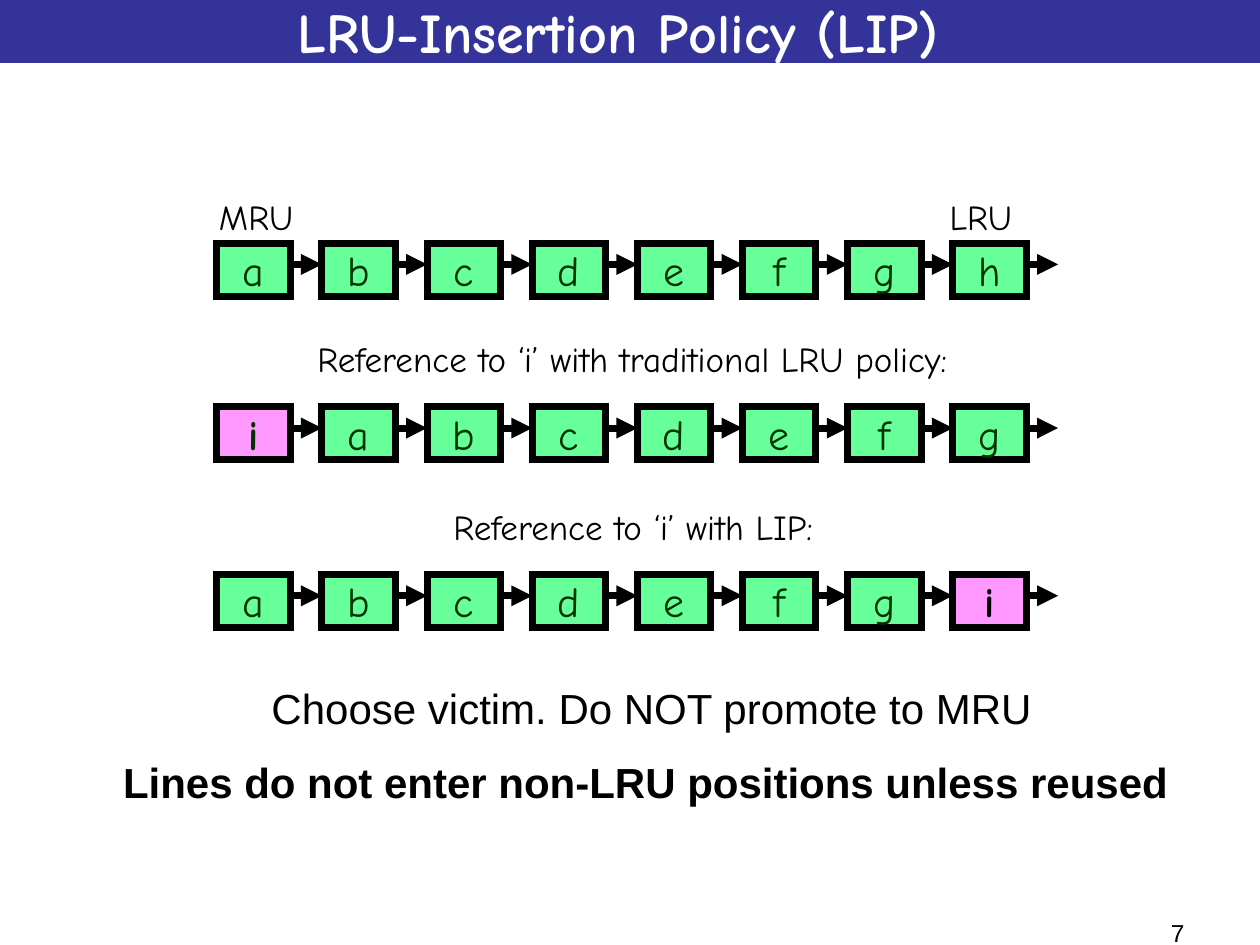
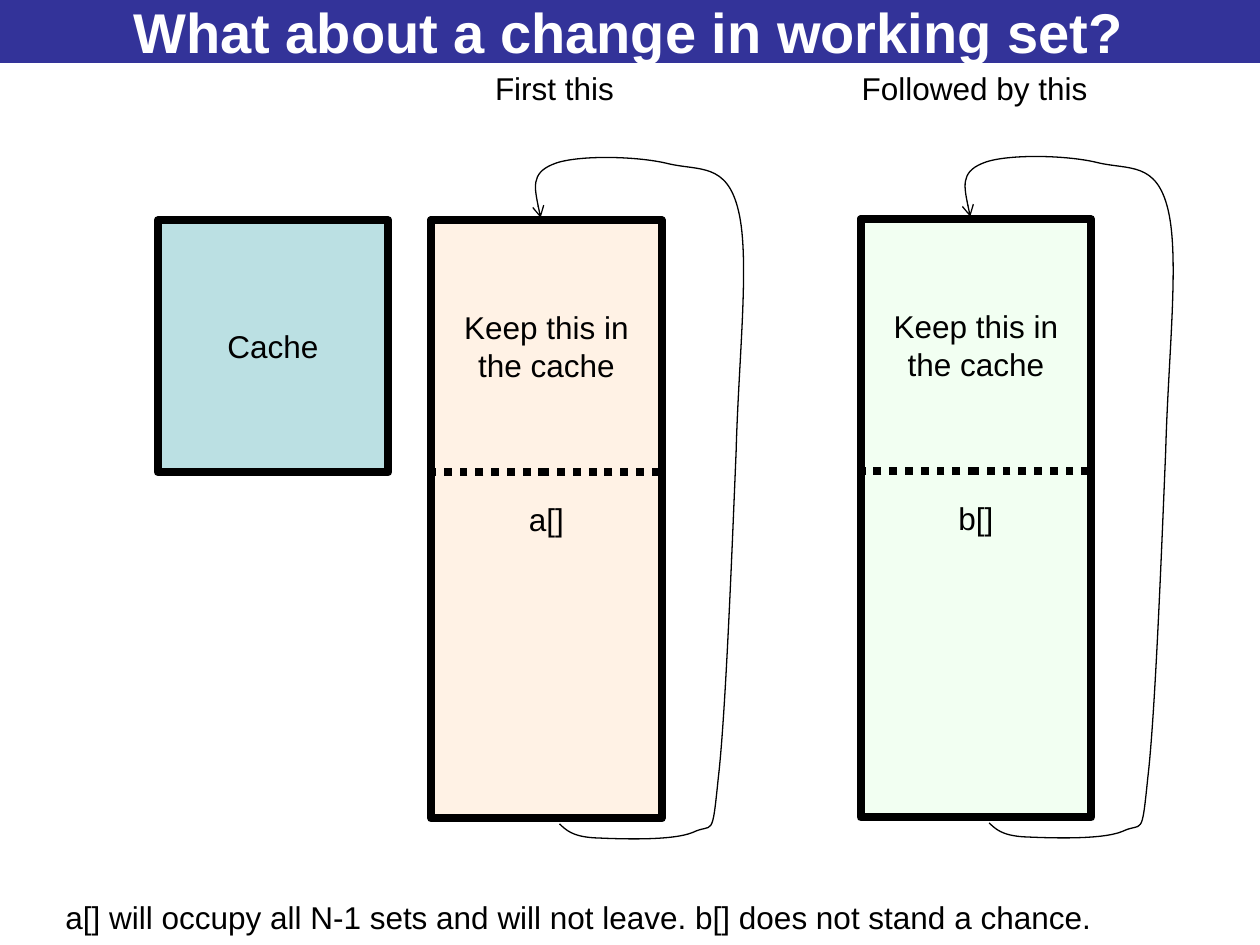
from lxml import etree
from pptx import Presentation
from pptx import util as u
from pptx.dml.color import RGBColor
from pptx.enum import dml, shapes, text
from pptx.oxml.ns import qn

COLORS = {
    "band": "333399", "white": "FFFFFF", "black": "000000",
    "cell": "66FF99", "new_cell": "FF99FF", "cell_ink": "003300",
    "cache": "BBE0E3", "array_a": "FFCC99", "array_b": "CCFFCC",
}
SANS, COMIC = "Arial", "Comic Neue"
LEFT, CENTER, RIGHT = text.PP_ALIGN.LEFT, text.PP_ALIGN.CENTER, text.PP_ALIGN.RIGHT

# Cache line chains, in cm
CELL_WIDTH, CELL_HEIGHT, CELL_PITCH = 1.48, 1.07, 2.12
CHAIN_LEFT, ARROW_DROP = 4.37, 0.43

# Working set blocks, in cm
BLOCK_WIDTH, BLOCK_HEIGHT, CACHE_HEIGHT = 4.65, 12.06, 5.08
# Start point, then three Bezier points per curve, from the block's top left
LOOP_POINTS = [
    (2.59, 12.17),
    (2.72, 12.29), (2.84, 12.42), (3.28, 12.45),
    (3.73, 12.47), (4.85, 12.52), (5.28, 12.34),
    (5.69, 12.14), (5.66, 12.52), (5.79, 11.25),
    (5.94, 9.98), (6.07, 6.58), (6.15, 4.67),
    (6.2, 2.77), (6.43, 0.79), (6.2, -0.18),
    (5.97, -1.17), (5.41, -0.99), (4.78, -1.14),
    (4.14, -1.3), (2.87, -1.32), (2.44, -1.12),
    (2.01, -0.94), (2.11, -0.51), (2.21, -0.05),
]


def rgb(name):
    return RGBColor.from_string(COLORS[name])


def cm(*lengths):
    return [u.Cm(length) for length in lengths]


def add_para(frame, para, words, size, font=SANS, color="black", bold=False,
             align=CENTER):
    para.alignment = align
    span = para.add_run()
    span.text = words
    span.font.size = u.Pt(size)
    span.font.name = font
    span.font.bold = bold
    span.font.color.rgb = rgb(color)


def add_label(parent, place, words, size, wrap=False, **style):
    box = parent.shapes.add_textbox(*cm(*place))
    frame = box.text_frame
    frame.word_wrap = wrap
    frame.auto_size = text.MSO_AUTO_SIZE.SHAPE_TO_FIT_TEXT
    add_para(frame, frame.paragraphs[0], words, size, **style)
    return frame


def add_rect(parent, place, words, size, fill=None, line_width=None, wrap=True,
             **style):
    rect = parent.shapes.add_shape(shapes.MSO_SHAPE.RECTANGLE, *cm(*place))
    rect.shadow.inherit = False
    if fill:
        rect.fill.solid()
        rect.fill.fore_color.rgb = rgb(fill)
    else:
        rect.fill.background()
    if line_width:
        rect.line.color.rgb = rgb("black")
        rect.line.width = u.Pt(line_width)
    else:
        rect.line.fill.background()
    frame = rect.text_frame
    frame.word_wrap = wrap
    frame.vertical_anchor = text.MSO_ANCHOR.MIDDLE
    add_para(frame, frame.paragraphs[0], words, size, **style)
    return rect


def add_line_part(shape, tag, **values):
    etree.SubElement(shape.line._get_or_add_ln(), qn(tag), **values)


def add_arrow(parent, x1, x2, y):
    arrow = parent.shapes.add_connector(
        shapes.MSO_CONNECTOR.STRAIGHT, *cm(x1, y, x2, y))
    arrow.line.color.rgb = rgb("black")
    arrow.line.width = u.Pt(4)
    add_line_part(arrow, "a:tailEnd", type="triangle")
    etree.SubElement(arrow._element.spPr, qn("a:effectLst"))


def add_page(deck, title, font):
    page = deck.slides.add_slide(deck.slide_layouts[6])
    add_rect(page, (-0.05, 0, 25.45, 1.27), title, 32, fill="band",
             font=font, color="white", bold=True)
    return page


def add_chain(page, top, names, new_ink="cell_ink"):
    """Row of cache lines in recency order; line i is the new one."""
    chain = page.shapes.add_group_shape()
    lefts = [CHAIN_LEFT + i * CELL_PITCH for i in range(len(names))]
    for left, name in zip(lefts, names):
        is_new = name == "i"
        cell = add_rect(chain, (left, top, CELL_WIDTH, CELL_HEIGHT), name, 24,
                        fill="new_cell" if is_new else "cell", line_width=4,
                        wrap=False, font=COMIC, bold=is_new,
                        color=new_ink if is_new else "cell_ink")
        add_line_part(cell, "a:miter", lim="800000")
    for left in lefts:
        add_arrow(chain, left + CELL_WIDTH, left + CELL_PITCH, top + ARROW_DROP)
    return chain


def add_loop(page, left, top):
    points = [tuple(cm(left + x, top + y)) for x, y in LOOP_POINTS]
    builder = page.shapes.build_freeform(*points[0])
    builder.add_line_segments(points[1:], close=False)
    loop = builder.convert_to_shape()
    loop.shadow.inherit = False
    loop.fill.background()
    loop.line.color.rgb = rgb("black")
    loop.line.width = u.Pt(0.75)
    add_line_part(loop, "a:tailEnd", type="arrow")
    # Turn each three straight segments into one curve
    segments = list(loop._element.iter(qn("a:lnTo")))
    for i in range(0, len(segments), 3):
        curve = etree.Element(qn("a:cubicBezTo"))
        segments[i].addprevious(curve)
        for segment in segments[i:i + 3]:
            curve.append(segment[0])
            segment.getparent().remove(segment)


def add_working_set(page, left, top, name, fill):
    block = add_rect(page, (left, top, BLOCK_WIDTH, BLOCK_HEIGHT), name, 18,
                     fill=fill, line_width=4.5)
    tint = next(block._element.spPr.iter(qn("a:srgbClr")))
    etree.SubElement(tint, qn("a:alpha"), val="25000")
    kept = add_rect(page, (left, top, BLOCK_WIDTH, CACHE_HEIGHT),
                    "Keep this in the cache", 18, line_width=4.5)
    kept.line.dash_style = dml.MSO_LINE.ROUND_DOT
    add_loop(page, left, top)


def build_lip_page(deck):
    page = add_page(deck, "LRU-Insertion Policy (LIP) ", COMIC)
    add_label(page, (18.21, 18.39, 5.92, 0.66), "7", 14, wrap=True, align=RIGHT)

    # Three chains with their captions
    chains = [
        (4.9, "abcdefgh", "cell_ink",
         [((4.11, 3.81, 2.11, 1.09), "MRU"), ((18.85, 3.81, 1.85, 1.09), "LRU")]),
        (8.2, "iabcdefg", "cell_ink",
         [((5.41, 6.68, 14.68, 1.09),
           "Reference to ‘i’ with traditional LRU policy:")]),
        (11.58, "abcdefgi", "black",
         [((8.41, 10.06, 8.71, 1.09), "Reference to ‘i’ with LIP:")]),
    ]
    for top, names, new_ink, captions in chains:
        chain = add_chain(page, top, names, new_ink)
        for place, words in captions:
            add_label(chain, place, words, 20, font=COMIC)

    # Conclusion
    frame = add_label(page, (1.83, 13.64, 22.61, 2.82),
                      "Choose victim. Do NOT promote to MRU", 24, wrap=True)
    para = frame.add_paragraph()
    para.space_before = u.Pt(13.4)
    add_para(frame, para, "Lines do not enter non-LRU positions unless reused ",
             24, bold=True)


def build_working_set_page(deck):
    page = add_page(deck, "What about a change in working set?", SANS)
    add_rect(page, (3.18, 4.44, BLOCK_WIDTH, CACHE_HEIGHT), "Cache", 18,
             fill="cache", line_width=4.5)
    add_working_set(page, 8.69, 4.44, "a[]", "array_a")
    add_label(page, (9.73, 1.27, 2.95, 1.02), "First this", 18, align=LEFT)
    add_working_set(page, 17.35, 4.42, "b[]", "array_b")
    add_label(page, (17.12, 1.27, 5.11, 1.02), "Followed by this", 18, align=LEFT)
    add_label(page, (1.07, 17.98, 21.21, 1.02),
              "a[] will occupy all N-1 sets and will not leave. "
              "b[] does not stand a chance.", 18, align=LEFT)


def main():
    deck = Presentation()
    deck.slide_width, deck.slide_height = cm(25.4, 19.05)
    build_lip_page(deck)
    build_working_set_page(deck)
    deck.save("out.pptx")


if __name__ == "__main__":
    main()
